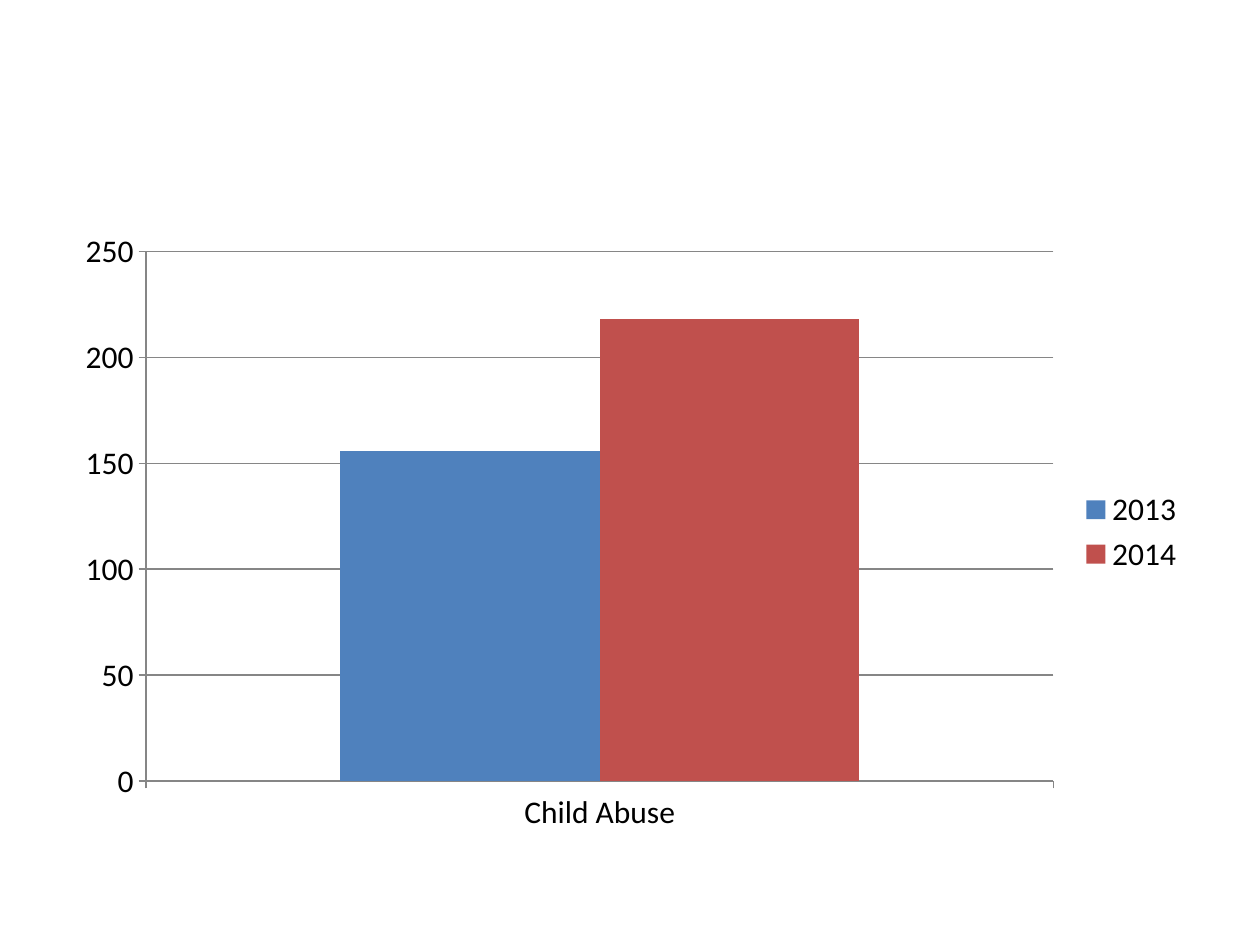
"""Build a slide with a clustered column chart of child abuse figures by year."""
from dataclasses import dataclass

import pptx
import pptx.chart.data
import pptx.dml.color
import pptx.enum.chart
import pptx.util

PX_PER_INCH = 126
AXIS_COLOR = "868686"


@dataclass
class Series:
    name: str
    values: tuple[int, ...]
    color: str


CATEGORIES = ["Child Abuse"]
SERIES = [
    Series("2013", (156,), "4F81BD"),
    Series("2014", (218,), "C0504D"),
]


def px(n: int) -> pptx.util.Emu:
    return pptx.util.Emu(round(n * 914400 / PX_PER_INCH))


def rgb(color: str) -> pptx.dml.color.RGBColor:
    return pptx.dml.color.RGBColor.from_string(color)


def style_line(line, color: str) -> None:
    line.color.rgb = rgb(color)
    line.width = pptx.util.Pt(0.75)


def style_axis(axis, gridlines: bool) -> None:
    axis.major_tick_mark = pptx.enum.chart.XL_TICK_MARK.OUTSIDE
    axis.minor_tick_mark = pptx.enum.chart.XL_TICK_MARK.NONE
    axis.has_major_gridlines = gridlines
    style_line(axis.format.line, AXIS_COLOR)
    if gridlines:
        style_line(axis.major_gridlines.format.line, AXIS_COLOR)


def add_column_chart(slide, x: int, y: int, w: int, h: int) -> None:
    data = pptx.chart.data.CategoryChartData()
    data.categories = CATEGORIES
    for series in SERIES:
        data.add_series(series.name, series.values)
    chart = slide.shapes.add_chart(
        pptx.enum.chart.XL_CHART_TYPE.COLUMN_CLUSTERED,
        px(x), px(y), px(w), px(h), data,
    ).chart

    chart.has_title = False
    chart.font.name = "Calibri"
    chart.font.size = pptx.util.Pt(18)
    chart.font.color.rgb = rgb("000000")

    chart.has_legend = True
    chart.legend.position = pptx.enum.chart.XL_LEGEND_POSITION.RIGHT
    chart.legend.include_in_layout = False

    style_axis(chart.category_axis, gridlines=False)
    style_axis(chart.value_axis, gridlines=True)
    chart.value_axis.minimum_scale = 0
    chart.value_axis.maximum_scale = 250
    chart.value_axis.major_unit = 50

    plot = chart.plots[0]
    plot.gap_width = 150
    plot.overlap = 0
    plot.vary_by_categories = False
    for drawn, series in zip(plot.series, SERIES):
        drawn.format.fill.solid()
        drawn.format.fill.fore_color.rgb = rgb(series.color)


def main() -> None:
    prs = pptx.Presentation()
    prs.slide_width = px(1260)
    prs.slide_height = px(945)
    slide = prs.slides.add_slide(prs.slide_layouts[6])
    add_column_chart(slide, 63, 220, 1134, 624)
    prs.save("out.pptx")


if __name__ == "__main__":
    main()
